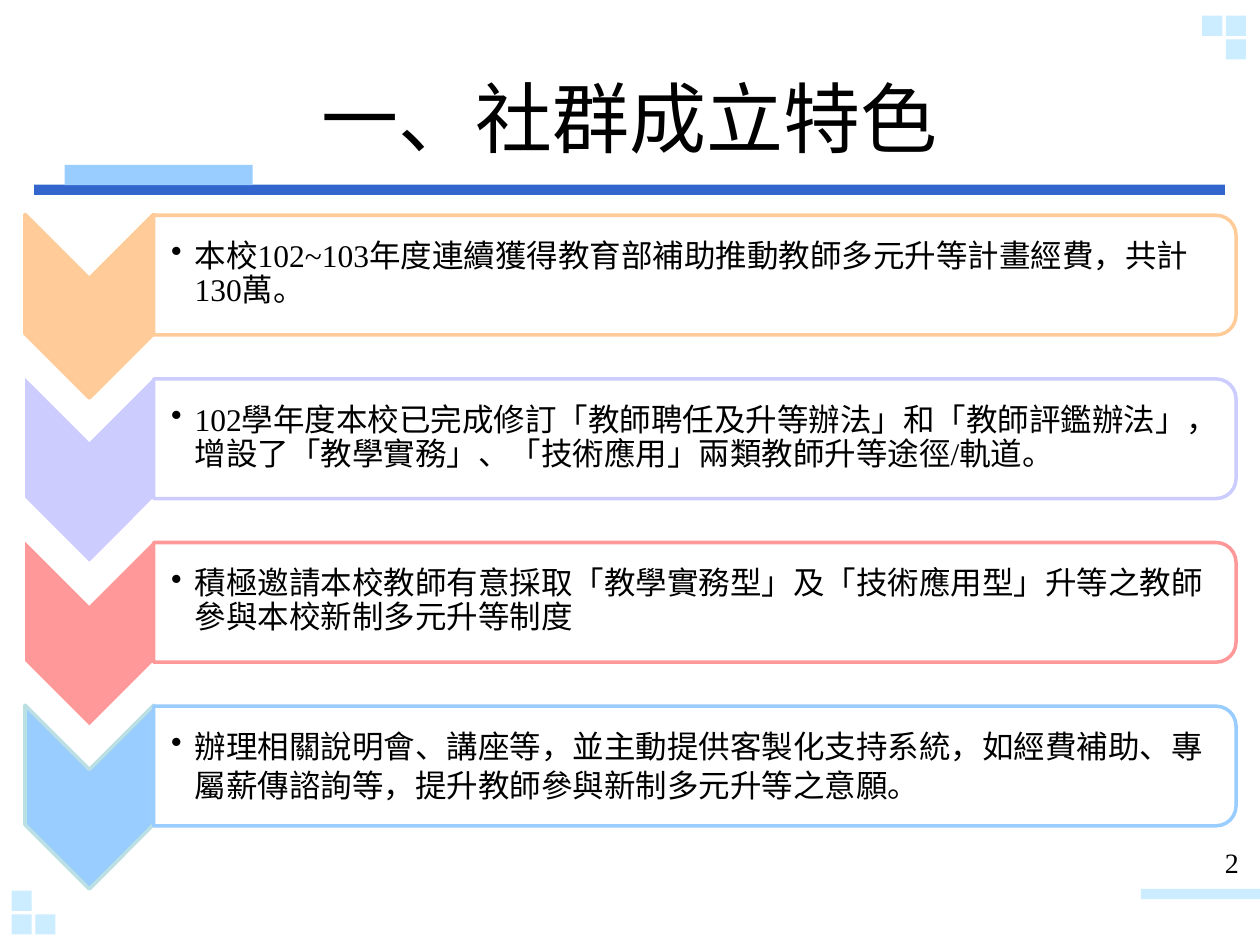
from lxml.etree import SubElement
from pptx import Presentation
from pptx.dml.color import RGBColor
from pptx.enum.shapes import MSO_SHAPE
from pptx.enum.text import MSO_ANCHOR, PP_ALIGN
from pptx.oxml.ns import qn
from pptx.util import Pt

CJK_FONT = "Noto Sans CJK SC"
LATIN_FONT = "Times New Roman"
ROW_PITCH = 93.5
ROWS = [
    ("FFCC99", "FFCC99", 0.9,
     "本校102~103年度連續獲得教育部補助推動教師多元升等計畫經費，共計130萬。"),
    ("CCCCFF", None, 0.9,
     "102學年度本校已完成修訂「教師聘任及升等辦法」和「教師評鑑辦法」，增設了「教學實務」、「技術應用」兩類教師升等途徑/軌道。"),
    ("FF9999", None, 0.9,
     "積極邀請本校教師有意採取「教學實務型」及「技術應用型」升等之教師參與本校新制多元升等制度"),
    ("99CCFF", "BBE0E3", Pt(22),
     "辦理相關說明會、講座等，並主動提供客製化支持系統，如經費補助、專屬薪傳諮詢等，提升教師參與新制多元升等之意願。"),
]


def color(value):
    """Turn a hex string into a colour."""
    return RGBColor.from_string(value)


def set_format(target, values):
    """Set each named attribute on the target."""
    for name, value in values.items():
        setattr(target, name, value)


def add_block(slide, kind, box, fill, line=None, rotation=0):
    """Add a filled shape whose box is given as it appears after rotation."""
    left, top, width, height = box
    if rotation:
        left, top = left + (width - height) / 2, top + (height - width) / 2
        width, height = height, width
    shape = slide.shapes.add_shape(kind, Pt(left), Pt(top), Pt(width), Pt(height))
    shape.rotation = rotation
    shape.shadow.inherit = False
    shape.fill.solid()
    shape.fill.fore_color.rgb = color(fill)
    if line:
        shape.line.color.rgb = color(line)
        shape.line.width = Pt(2)
    else:
        shape.line.fill.background()
    return shape


def add_text(slide, box, text, size, font, frame_format, paragraph_format):
    """Add a text box with one paragraph and return the paragraph."""
    frame = slide.shapes.add_textbox(*map(Pt, box)).text_frame
    set_format(frame, {"word_wrap": True, **frame_format})
    paragraph = frame.paragraphs[0]
    set_format(paragraph, paragraph_format)
    run = paragraph.add_run()
    run.text = text
    set_format(run.font, {"size": Pt(size), "name": font})
    run.font.color.rgb = color("000000")
    SubElement(run.font._element, qn("a:ea"), typeface=CJK_FONT)
    return paragraph


def add_squares(slide, left, top, cells):
    """Add small squares on a grid of columns and rows."""
    for column, row in cells:
        box = (left + 13.5 * column, top + 13.5 * row, 11.5, 11.5)
        add_block(slide, MSO_SHAPE.RECTANGLE, box, "CCECFF")


def add_decoration(slide):
    """Add the bars and corner squares."""
    for box, fill in [
        ((19.5, 105.5, 680.5, 5.8), "3366CC"),
        ((37, 94.3, 107.5, 11.5), "99CCFF"),
        ((652, 508, 68, 5.8), "CCECFF"),
    ]:
        add_block(slide, MSO_SHAPE.RECTANGLE, box, fill)
    add_squares(slide, 687, 9, [(0, 0), (1, 0), (1, 1)])
    add_squares(slide, 6.7, 509, [(0, 0), (0, 1), (1, 1)])


def add_row(slide, left, top, fill, outline, spacing, text):
    """Add a downward chevron and the bulleted box beside it."""
    add_block(slide, MSO_SHAPE.CHEVRON, (left, top, 73.5, 105), fill, outline, 90)
    panel = add_block(slide, MSO_SHAPE.ROUND_2_SAME_RECTANGLE,
                      (left + 73.5, top + 0.5, 618.5, 68.4), "FFFFFF", fill, 90)
    fill_color = panel.fill._xPr.find(qn("a:solidFill"))[0]
    SubElement(fill_color, qn("a:alpha"), val="90000")
    paragraph = add_text(
        slide, (left + 73.5, top + 3.5, 615, 61.5), text, 18, LATIN_FONT,
        {"vertical_anchor": MSO_ANCHOR.MIDDLE, "margin_left": Pt(10),
         "margin_right": Pt(0.8), "margin_top": Pt(0.8), "margin_bottom": Pt(0.8)},
        {"line_spacing": spacing, "space_after": Pt(2.7)})
    properties = paragraph._p.get_or_add_pPr()
    properties.set("marL", str(Pt(13.5)))
    properties.set("indent", str(Pt(-13.5)))
    SubElement(properties, qn("a:buChar"), char="•")


def main():
    """Build and save the slide."""
    presentation = Presentation()
    set_format(presentation, {"slide_width": Pt(720), "slide_height": Pt(540)})
    slide = presentation.slides.add_slide(presentation.slide_layouts[6])
    add_decoration(slide)
    add_text(slide, (36, 21.6, 648, 90), "一、社群成立特色", 44, CJK_FONT,
             {"vertical_anchor": MSO_ANCHOR.MIDDLE}, {"alignment": PP_ALIGN.CENTER})
    add_text(slide, (690, 479.5, 25, 28), "2", 16, LATIN_FONT,
             {"margin_left": 0}, {"alignment": PP_ALIGN.RIGHT})
    for index, row in enumerate(ROWS):
        add_row(slide, 14.3, 122.5 + index * ROW_PITCH, *row)
    presentation.save("out.pptx")


if __name__ == "__main__":
    main()
